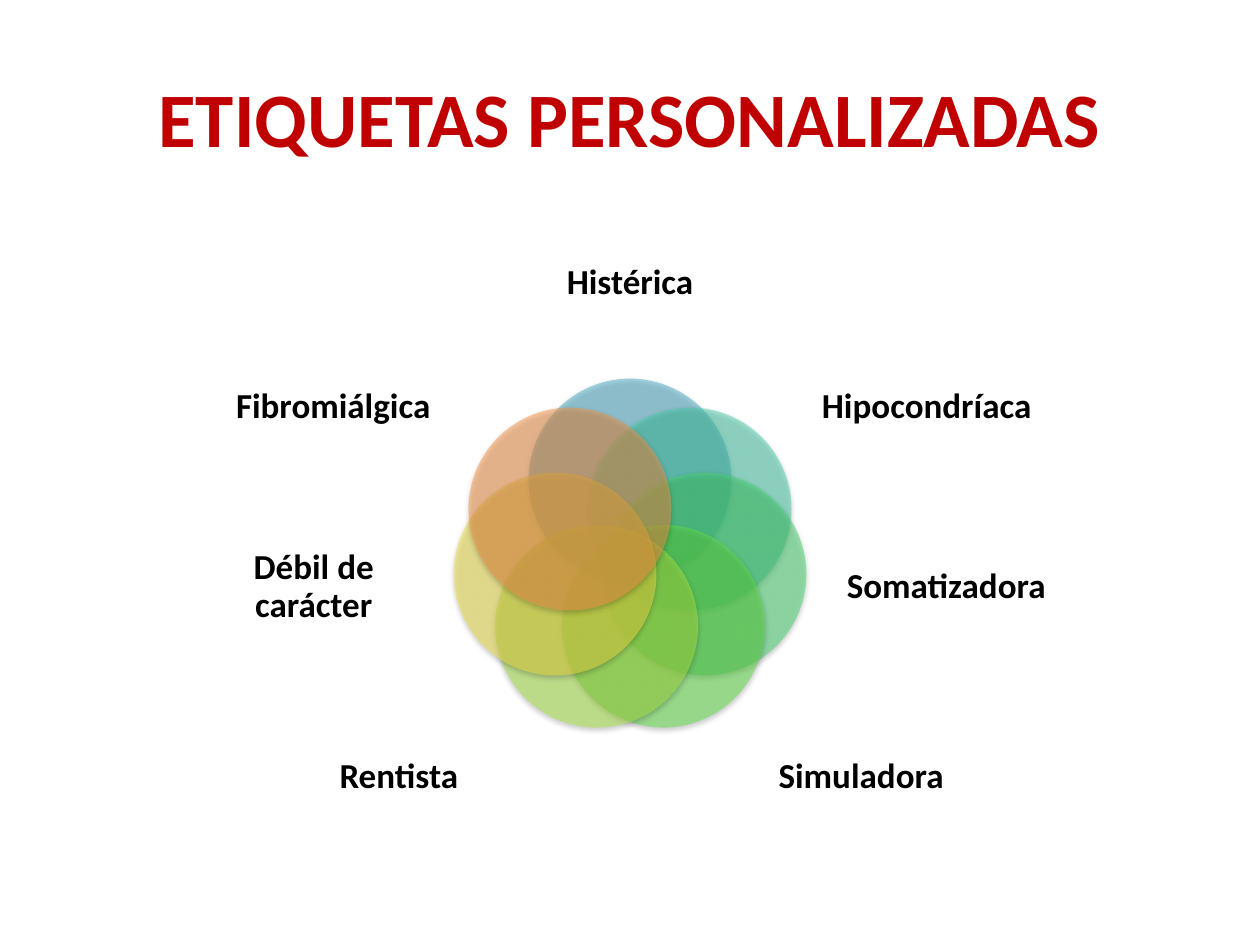
from math import cos, pi, sin

from lxml.etree import SubElement
from pptx import Presentation
from pptx.dml.color import RGBColor
from pptx.enum.shapes import MSO_SHAPE
from pptx.enum.text import MSO_ANCHOR, PP_ALIGN
from pptx.oxml.ns import qn
from pptx.util import Inches, Pt

WIDTH, HEIGHT = Inches(10), Inches(7.5)
COLORS = {
    "title": "C00000", "label": "000000", "shadow": "000000",
    "Histérica": "4BACC6", "Hipocondríaca": "49CFAE", "Somatizadora": "47D872",
    "Simuladora": "60E146", "Rentista": "ACE946", "Débil de carácter": "F0E146",
    "Fibromiálgica": "F79646",
}
TITLE_FORMAT = {"size": Pt(44), "name": "Calibri", "bold": True}
LABEL_FORMAT = {"size": Pt(20), "name": "Calibri", "bold": True}

# Label boxes as percent of the slide: distance from the middle, centre y, width, height
TOP_ROW = (0, 29.93, 18.5, 13.2)
UPPER_ROW = (23.55, 43.13, 17.5, 14.53)
MIDDLE_ROW = (25.1, 62.13, 17.2, 15.47)
LOWER_ROW = (18.35, 82.27, 18.5, 14.13)
# Clockwise from the top: name, row, side of the middle
PETALS = [
    ("Histérica", TOP_ROW, 1),
    ("Hipocondríaca", UPPER_ROW, 1),
    ("Somatizadora", MIDDLE_ROW, 1),
    ("Simuladora", LOWER_ROW, 1),
    ("Rentista", LOWER_ROW, -1),
    ("Débil de carácter", MIDDLE_ROW, -1),
    ("Fibromiálgica", UPPER_ROW, -1),
]
CENTER_X, CENTER_Y = WIDTH * 0.5, Inches(4.42)
RING_RADIUS, DIAMETER = Inches(0.61), Inches(1.61)


def box_around(x, y, width, height):
    return [round(value) for value in (x - width / 2, y - height / 2, width, height)]


def add_text(shapes, box, text, color, font_format, margin=None, line_spacing=None):
    shape = shapes.add_textbox(*box)
    frame = shape.text_frame
    frame.word_wrap = True
    frame.vertical_anchor = MSO_ANCHOR.MIDDLE
    if margin is not None:
        for side in ("left", "top", "right", "bottom"):
            setattr(frame, f"margin_{side}", margin)
    paragraph = frame.paragraphs[0]
    paragraph.alignment = PP_ALIGN.CENTER
    paragraph.line_spacing = line_spacing
    run = paragraph.add_run()
    run.text = text
    for name, value in font_format.items():
        setattr(run.font, name, value)
    run.font.color.rgb = RGBColor.from_string(COLORS[color])


def add_alpha(color_element, percent):
    SubElement(color_element, qn("a:alpha"), val=str(percent * 1000))


def add_shadow(shape):
    """Soft shadow that falls straight down."""
    shape.shadow.inherit = False
    effects = shape._element.spPr.find(qn("a:effectLst"))
    shadow = SubElement(effects, qn("a:outerShdw"), blurRad=str(Pt(3.1)),
                        dist=str(Pt(1.6)), dir="5400000", rotWithShape="0")
    color = SubElement(shadow, qn("a:srgbClr"), val=COLORS["shadow"])
    add_alpha(color, 38)


def add_circle(shapes, name, angle):
    x = CENTER_X + RING_RADIUS * sin(angle)
    y = CENTER_Y - RING_RADIUS * cos(angle)
    circle = shapes.add_shape(MSO_SHAPE.OVAL, *box_around(x, y, DIAMETER, DIAMETER))
    circle.fill.solid()
    circle.fill.fore_color.rgb = RGBColor.from_string(COLORS[name])
    add_alpha(circle._element.spPr.find(qn("a:solidFill"))[0], 50)
    circle.line.fill.background()
    add_shadow(circle)


def add_label(shapes, name, row, side):
    offset, y, width, height = (value / 100 for value in row)
    box = box_around(CENTER_X + side * offset * WIDTH, y * HEIGHT,
                     width * WIDTH, height * HEIGHT)
    add_text(shapes, box, name, "label", LABEL_FORMAT, margin=0, line_spacing=0.9)


def main():
    presentation = Presentation()
    presentation.slide_width, presentation.slide_height = WIDTH, HEIGHT
    slide = presentation.slides.add_slide(presentation.slide_layouts[6])
    title_box = box_around(CENTER_X, HEIGHT * 0.1233, WIDTH * 0.9, HEIGHT / 6)
    add_text(slide.shapes, title_box, "ETIQUETAS PERSONALIZADAS", "title", TITLE_FORMAT)
    flower = slide.shapes.add_group_shape().shapes
    for index, (name, row, side) in enumerate(PETALS):
        add_circle(flower, name, 2 * pi * index / len(PETALS))
        add_label(flower, name, row, side)
    presentation.save("out.pptx")


if __name__ == "__main__":
    main()
